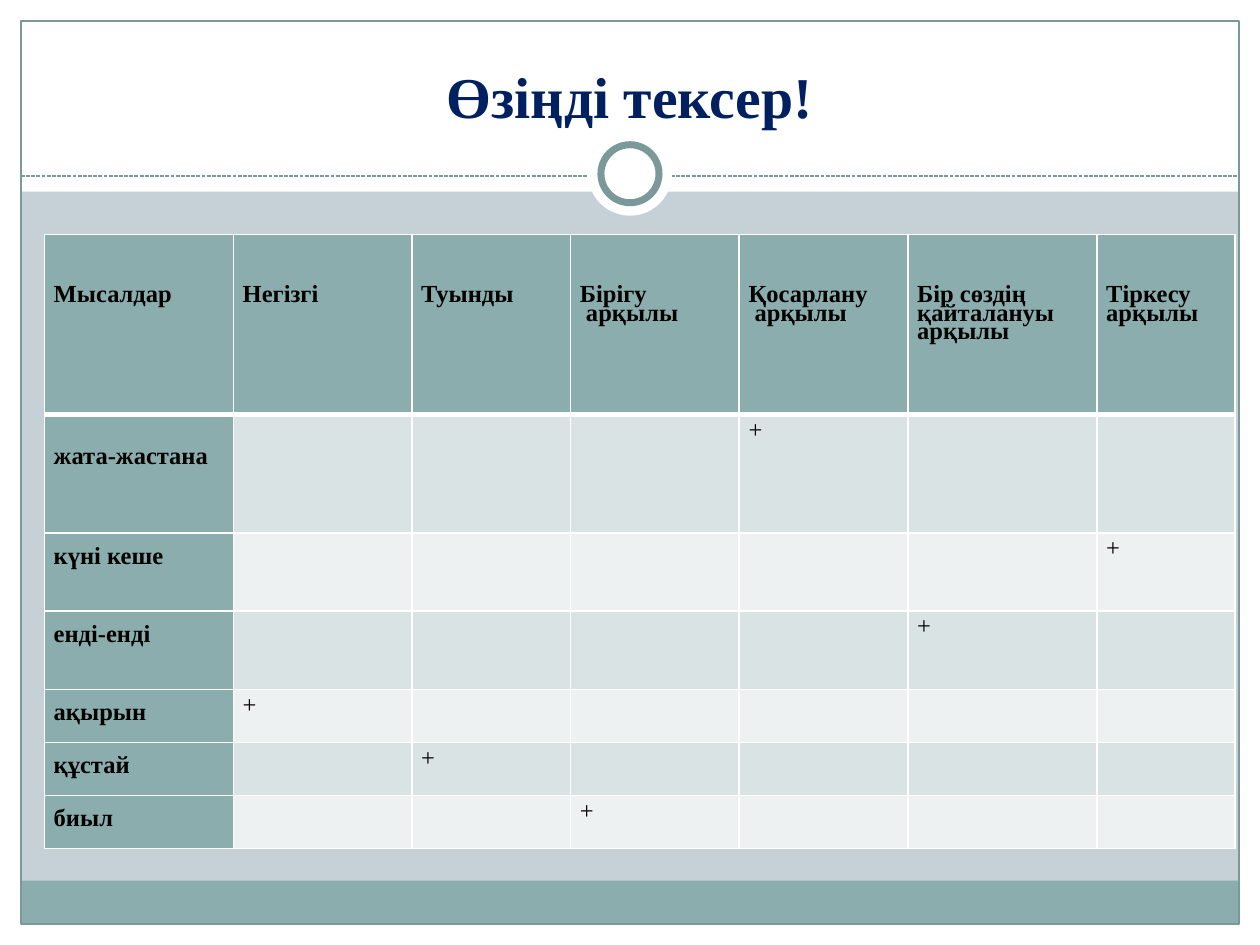
from lxml import etree
from pptx import Presentation
from pptx.dml.color import RGBColor
from pptx.enum import dml, shapes, text
from pptx.oxml import ns
from pptx.util import Pt

WHITE = RGBColor(0xFF, 0xFF, 0xFF)
BLACK = RGBColor(0, 0, 0)
NAVY = RGBColor(0x00, 0x20, 0x60)
MIST = RGBColor(0xC5, 0xD1, 0xD7)
TEAL = RGBColor(0x8C, 0xAD, 0xAE)
DARK_TEAL = RGBColor(0x7C, 0x99, 0x9A)
BANDS = [RGBColor(0xDA, 0xE3, 0xE3), RGBColor(0xEE, 0xF1, 0xF2)]
FONT = "Times New Roman"
WIDTH, HEIGHT = 720, 540
EDGE = 12
LEADING = 10.5

HEADING = "Өзіңді тексер!"
CATEGORIES = [
    ("Мысалдар", 108), ("Негізгі", 102), ("Туынды", 90.7),
    ("Бірігу\n арқылы", 96.4), ("Қосарлану\n арқылы", 96.4),
    ("Бір сөздің\nқайталануы\nарқылы", 108), ("Тіркесу\nарқылы", 79),
]
HEADER_HEIGHT, HEADER_OFFSET = 102.8, 3
EXAMPLES = [
    ("жата-жастана", 4, 67.8, 2),
    ("күні кеше", 6, 44.7, 1),
    ("енді-енді", 5, 44.7, 1),
    ("ақырын", 1, 30.3, 1),
    ("құстай", 2, 30.3, 1),
    ("биыл", 3, 30.3, 1),
]


def add_panel(slide, preset, left, top, width, height, fill=None, line=None, weight=0.75):
    panel = slide.shapes.add_shape(preset, Pt(left), Pt(top), Pt(width), Pt(height))
    panel.shadow.inherit = False
    if fill is None:
        panel.fill.background()
    else:
        panel.fill.solid()
        panel.fill.fore_color.rgb = fill
    if line is None:
        panel.line.fill.background()
    else:
        panel.line.color.rgb = line
        panel.line.width = Pt(weight)


def add_backdrop(slide):
    slide.background.fill.solid()
    slide.background.fill.fore_color.rgb = MIST
    rect, oval = shapes.MSO_SHAPE.RECTANGLE, shapes.MSO_SHAPE.OVAL
    inner_width, inner_height = WIDTH - 2 * EDGE, HEIGHT - 2 * EDGE
    for area in [
        (0, HEIGHT - EDGE, WIDTH, EDGE), (0, 0, WIDTH, 109.6),
        (0, 0, EDGE, HEIGHT), (WIDTH - EDGE, 0, EDGE, HEIGHT),
    ]:
        add_panel(slide, rect, *area, fill=WHITE)
    add_panel(slide, rect, EDGE, 503.2, inner_width, 24.5, fill=TEAL)
    add_panel(slide, rect, EDGE, EDGE, inner_width, inner_height, line=DARK_TEAL)

    divider = slide.shapes.add_connector(
        shapes.MSO_CONNECTOR.STRAIGHT, Pt(EDGE), Pt(100.6), Pt(WIDTH - EDGE), Pt(100.6))
    divider.line.color.rgb = DARK_TEAL
    divider.line.width = Pt(0.75)
    divider.line.dash_style = dml.MSO_LINE.SQUARE_DOT
    etree.SubElement(divider._element.spPr, ns.qn("a:effectLst"))

    for diameter, line in [(48, None), (33.2, DARK_TEAL)]:
        add_panel(slide, oval, (WIDTH - diameter) / 2, 99.3 - diameter / 2,
                  diameter, diameter, fill=WHITE, line=line, weight=4)


def add_heading(slide):
    heading = slide.shapes.title
    heading.left, heading.top, heading.width, heading.height = Pt(24), Pt(18), Pt(672), Pt(60)
    frame = heading.text_frame
    frame.text = HEADING
    frame.auto_size = text.MSO_AUTO_SIZE.NONE
    frame.vertical_anchor = text.MSO_ANCHOR.BOTTOM
    paragraph = frame.paragraphs[0]
    paragraph.alignment = text.PP_ALIGN.CENTER
    format_font(paragraph, 33, NAVY, True)
    slide.shapes._spTree.append(heading._element)


def format_font(paragraph, size, color, bold):
    font = paragraph.font
    font.name, font.size, font.bold = FONT, Pt(size), bold
    font.color.rgb = color


def set_border(cell, side, weight):
    props = cell._tc.get_or_add_tcPr()
    edge = etree.SubElement(props, ns.qn("a:ln" + side), w=str(Pt(weight)))
    paint = etree.SubElement(edge, ns.qn("a:solidFill"))
    etree.SubElement(paint, ns.qn("a:srgbClr"), val=str(WHITE))


def fill_cell(cell, words, fill, label, offset, top_weight, bottom_weight):
    cell.margin_left = cell.margin_right = Pt(5.4)
    cell.margin_top, cell.margin_bottom = Pt(offset * LEADING), 0
    for side, weight in [("L", 1), ("R", 1), ("T", top_weight), ("B", bottom_weight)]:
        set_border(cell, side, weight)
    cell.fill.solid()
    cell.fill.fore_color.rgb = fill
    cell.text = words
    for paragraph in cell.text_frame.paragraphs:
        paragraph.line_spacing = Pt(LEADING) if label else 1.07
        format_font(paragraph, 14, BLACK, label)


def add_answers(slide):
    widths = [width for _, width in CATEGORIES]
    heights = [HEADER_HEIGHT] + [height for _, _, height, _ in EXAMPLES]
    table = slide.shapes.add_table(
        len(heights), len(widths), Pt(25.3), Pt(134), Pt(sum(widths)), Pt(sum(heights))).table
    table.first_row = table.horz_banding = False
    for column, width in zip(table.columns, widths):
        column.width = Pt(width)
    for row, height in zip(table.rows, heights):
        row.height = Pt(height)

    for c, (category, _) in enumerate(CATEGORIES):
        fill_cell(table.cell(0, c), category, TEAL, True, HEADER_OFFSET, 1, 3)
    for r, (example, answer, _, offset) in enumerate(EXAMPLES, 1):
        top_weight = 3 if r == 1 else 1
        fill_cell(table.cell(r, 0), example, TEAL, True, offset, top_weight, 1)
        for c in range(1, len(widths)):
            mark = "+" if c == answer else ""
            fill_cell(table.cell(r, c), mark, BANDS[(r - 1) % 2], False, 0, top_weight, 1)


def main():
    deck = Presentation()
    deck.slide_width, deck.slide_height = Pt(WIDTH), Pt(HEIGHT)
    slide = deck.slides.add_slide(deck.slide_layouts[5])
    add_backdrop(slide)
    add_heading(slide)
    add_answers(slide)
    deck.save("out.pptx")


if __name__ == "__main__":
    main()
